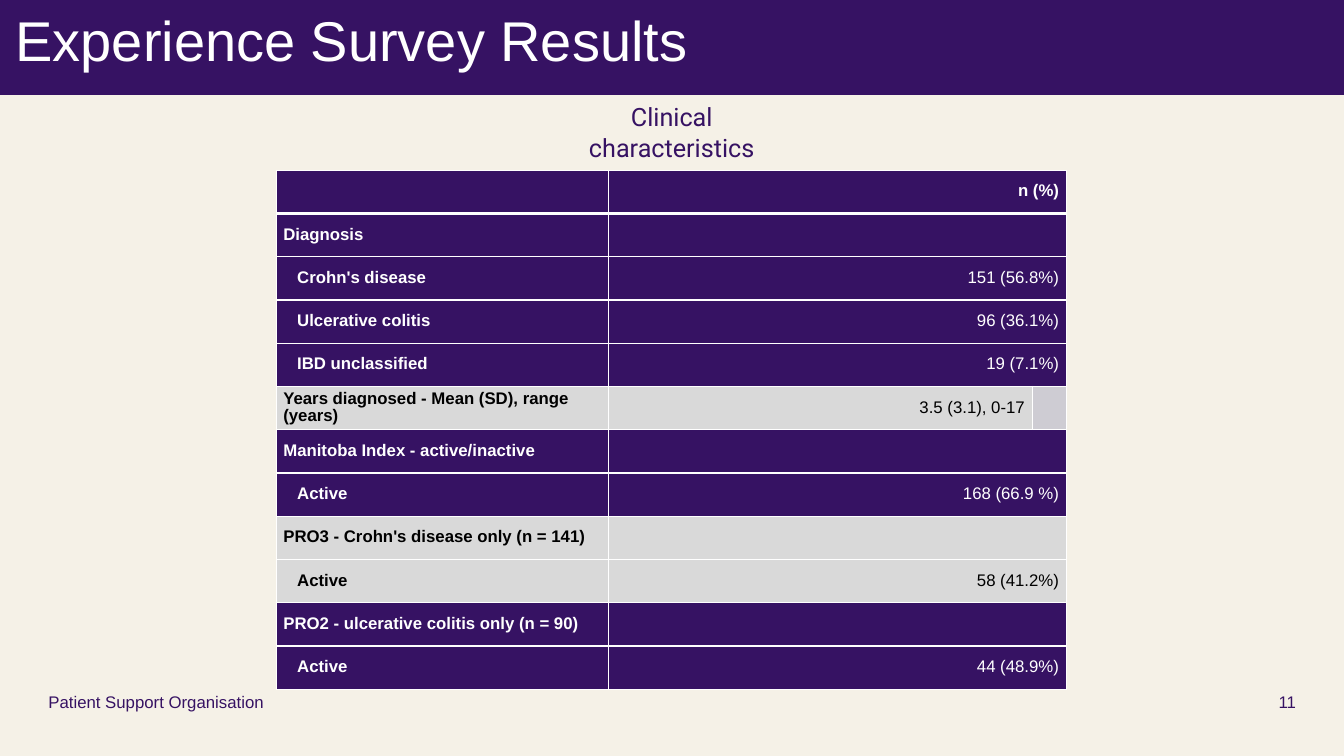
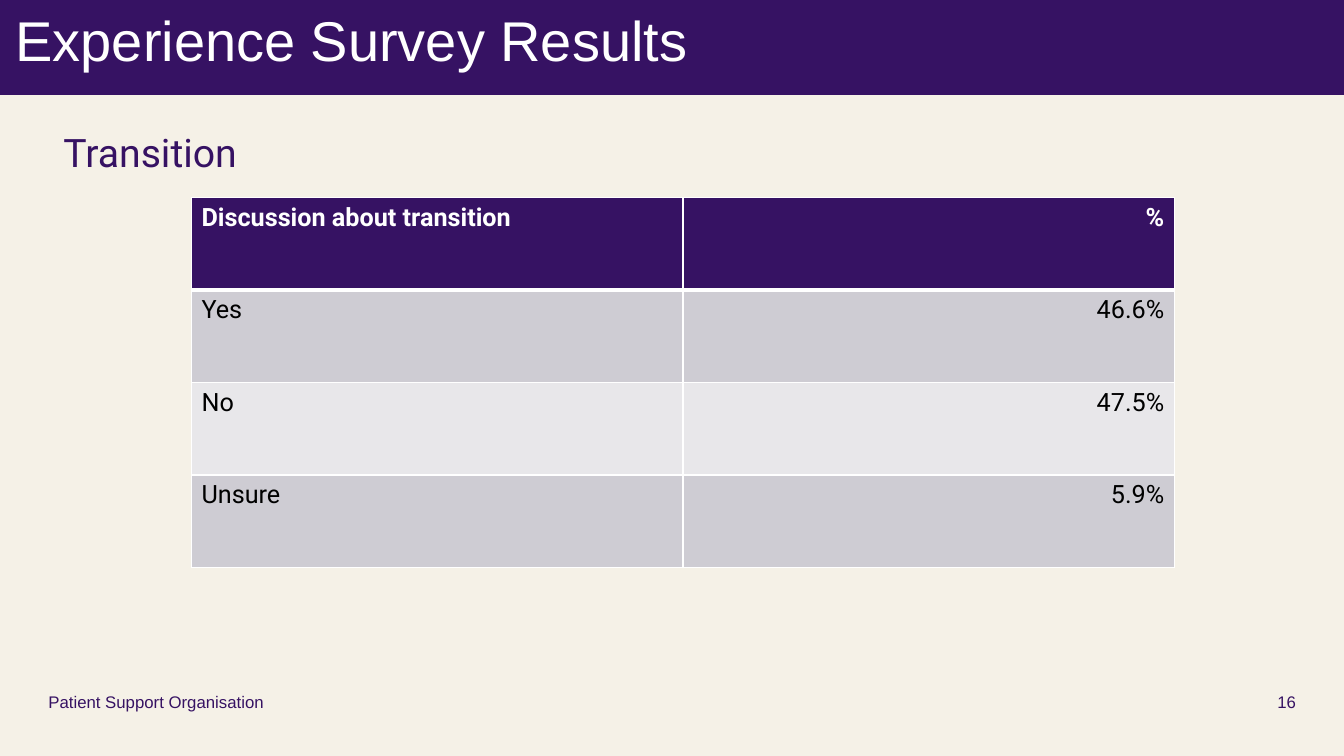
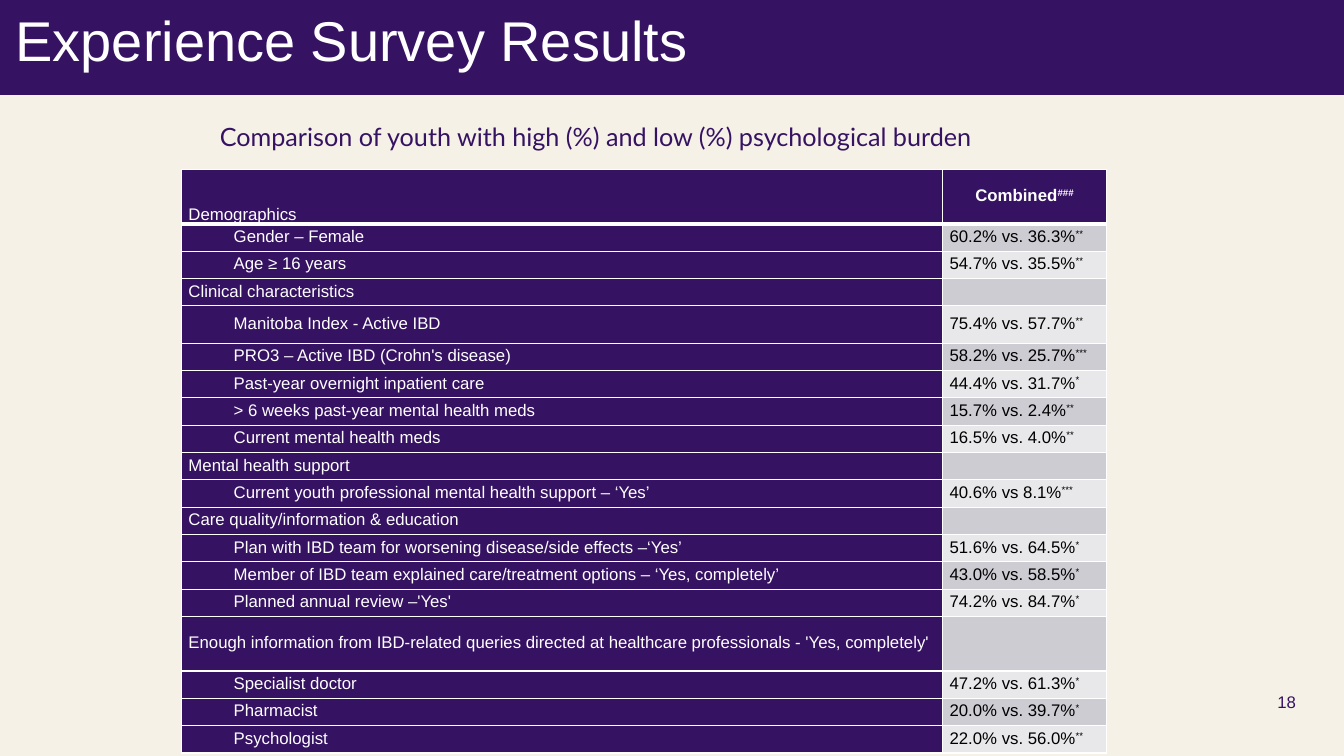
import dataclasses

import lxml.etree
import pptx
import pptx.dml.color
import pptx.enum.text
import pptx.oxml.ns
import pptx.util

Cm = pptx.util.Cm
Pt = pptx.util.Pt
ALIGN = pptx.enum.text.PP_ALIGN
ANCHOR = pptx.enum.text.MSO_ANCHOR
qn = pptx.oxml.ns.qn


@dataclasses.dataclass(frozen=True)
class Theme:
    """Colours, fonts and type sizes shared by all slides."""

    purple: str = "361263"
    cream: str = "F5F1E7"
    white: str = "FFFFFF"
    black: str = "000000"
    grey: str = "D9D9D9"
    band_dark: str = "CECCD3"
    band_light: str = "E8E7EA"
    base_font: str = "Arial"
    accent_font: str = "Roboto"
    caption_font: str = "Lato"
    title_size: int = 40
    heading_size: int = 28
    body_size: int = 18
    small_size: int = 12


THEME = Theme()
TITLE = "Experience Survey Results"
FOOTER = "Patient Support Organisation"
SMALL = {"name": THEME.base_font, "size": Pt(THEME.small_size)}
BODY = {"name": THEME.accent_font, "size": Pt(THEME.body_size)}
TIGHT = {"margin_left": Cm(0.18), "margin_right": Cm(0.18),
         "margin_top": 0, "margin_bottom": 0,
         "vertical_anchor": ANCHOR.MIDDLE}
ROOMY = {"margin_left": Cm(0.25), "margin_right": Cm(0.25),
         "margin_top": Cm(0.13), "margin_bottom": Cm(0.13),
         "vertical_anchor": ANCHOR.TOP}

CLINICAL_ROWS = [
    ("", "n (%)", THEME.purple),
    ("Diagnosis", "", THEME.purple),
    ("> Crohn's disease", "151 (56.8%)", THEME.purple),
    ("> Ulcerative colitis", "96 (36.1%)", THEME.purple),
    ("> IBD unclassified", "19 (7.1%)", THEME.purple),
    ("Years diagnosed - Mean (SD), range (years)", "3.5 (3.1), 0-17",
     THEME.grey),
    ("Manitoba Index - active/inactive", "", THEME.purple),
    ("> Active", "168 (66.9 %)", THEME.purple),
    ("PRO3 - Crohn's disease only (n = 141)", "", THEME.grey),
    ("> Active", "58 (41.2%)", THEME.grey),
    ("PRO2 - ulcerative colitis only (n = 90)", "", THEME.purple),
    ("> Active", "44 (48.9%)", THEME.purple),
]
YEARS_ROW = 5

TRANSITION_ROWS = [
    ("Discussion about transition", "%"),
    ("Yes", "46.6%"),
    ("No", "47.5%"),
    ("Unsure", "5.9%"),
]

BURDEN_ROWS = [
    ("Demographics", "Combined###"),
    ("> Gender – Female", "60.2% vs. 36.3%**"),
    ("> Age ≥ 16 years", "54.7% vs. 35.5%**"),
    ("Clinical characteristics", ""),
    ("> Manitoba Index - Active IBD", "75.4% vs. 57.7%**"),
    ("> PRO3 – Active IBD (Crohn's disease)", "58.2% vs. 25.7%***"),
    ("> Past-year overnight inpatient care", "44.4% vs. 31.7%*"),
    ("> > 6 weeks past-year mental health meds", "15.7% vs. 2.4%**"),
    ("> Current mental health meds", "16.5% vs. 4.0%**"),
    ("Mental health support", ""),
    ("> Current youth professional mental health support – ‘Yes’",
     "40.6% vs 8.1%***"),
    ("Care quality/information & education", ""),
    ("> Plan with IBD team for worsening disease/side effects –‘Yes’",
     "51.6% vs. 64.5%*"),
    ("> Member of IBD team explained care/treatment options – "
     "‘Yes, completely’", "43.0% vs. 58.5%*"),
    ("> Planned annual review –'Yes'", "74.2% vs. 84.7%*"),
    ("Enough information from IBD-related queries directed at healthcare "
     "professionals - 'Yes, completely'", ""),
    ("> Specialist doctor", "47.2% vs. 61.3%*"),
    ("> Pharmacist", "20.0% vs. 39.7%*"),
    ("> Psychologist", "22.0% vs. 56.0%**"),
]
BURDEN_HEIGHTS = {0: 1.37, 4: 0.94, 15: 1.37}


def apply_format(target, values):
    """Set each named attribute of the target."""
    for name, value in values.items():
        setattr(target, name, value)


def rgb(colour):
    """Turn a hex string into a colour value."""
    return pptx.dml.color.RGBColor.from_string(colour)


def paint(target, colour):
    """Give a shape, cell or background a solid fill."""
    target.fill.solid()
    target.fill.fore_color.rgb = rgb(colour)


def add_span(para, text, font, colour):
    """Add one formatted run to a paragraph."""
    span = para.add_run()
    span.text = text
    apply_format(span.font, font)
    span.font.color.rgb = rgb(colour)
    return span


def add_label(page, text, place, font, frame_format=None, align=ALIGN.LEFT):
    """Add a purple text box without insets."""
    box = page.shapes.add_textbox(*map(Cm, place))
    frame = box.text_frame
    apply_format(frame, {"margin_left": 0, "margin_right": 0,
                         "margin_top": 0, "margin_bottom": 0,
                         "word_wrap": True, **(frame_format or {})})
    para = frame.paragraphs[0]
    para.alignment = align
    add_span(para, text, font, THEME.purple)


def add_page(deck, number, footer=FOOTER):
    """Add a slide with its title band, footer and number."""
    page = deck.slides.add_slide(deck.slide_layouts[5])
    title = page.shapes.title
    apply_format(title, {"left": 0, "top": 0, "width": deck.slide_width,
                         "height": Cm(2.39)})
    paint(title, THEME.purple)
    frame = title.text_frame
    apply_format(frame, {"margin_left": Cm(0.39), "margin_right": 0,
                         "margin_top": Cm(0.14), "margin_bottom": 0,
                         "vertical_anchor": ANCHOR.TOP, "word_wrap": True,
                         "auto_size": pptx.enum.text.MSO_AUTO_SIZE.NONE})
    para = frame.paragraphs[0]
    para.alignment = ALIGN.LEFT
    add_span(para, TITLE,
             {"name": THEME.base_font, "size": Pt(THEME.title_size)},
             THEME.white)
    bottom = {"vertical_anchor": ANCHOR.BOTTOM}
    if footer:
        add_label(page, footer, (1.22, 17.02, 12.09, 0.91), SMALL, bottom)
    add_label(page, str(number), (31.52, 17.02, 1.14, 0.91), SMALL, bottom,
              ALIGN.RIGHT)
    return page


def set_borders(cell, row):
    """Draw white cell borders, thicker under the header row."""
    widths = {"L": 1, "R": 1, "T": 3 if row == 1 else 1,
              "B": 3 if row == 0 else 1}
    properties = cell._tc.get_or_add_tcPr()
    for index, (side, width) in enumerate(widths.items()):
        line = lxml.etree.Element(qn("a:ln" + side), w=str(Pt(width)))
        fill = lxml.etree.SubElement(line, qn("a:solidFill"))
        lxml.etree.SubElement(fill, qn("a:srgbClr"), val=THEME.white)
        properties.insert(index, line)


def add_table(page, corner, widths, heights):
    """Add a table with the given column widths and row heights."""
    frame = page.shapes.add_table(
        len(heights), len(widths), *map(Cm, corner),
        Cm(sum(widths)), Cm(sum(heights)))
    table = frame.table
    for column, width in zip(table.columns, widths):
        column.width = Cm(width)
    for row, height in zip(table.rows, heights):
        row.height = Cm(height)
    for row, cells in enumerate(table.rows):
        for cell in cells.cells:
            set_borders(cell, row)
    return table


def write_cell(cell, text, fill, font, cell_format, align=ALIGN.LEFT,
               indent=0, spacing=None):
    """Fill a cell; '> ' indents and trailing marks are raised."""
    paint(cell, fill)
    apply_format(cell, cell_format)
    para = cell.text_frame.paragraphs[0]
    apply_format(para, {"alignment": align, "line_spacing": spacing})
    colour = THEME.white if fill == THEME.purple else THEME.black
    if text.startswith("> "):
        text = text[2:]
        para._p.get_or_add_pPr().set("marL", str(Cm(indent)))
    words = text.rstrip("*#")
    if words:
        add_span(para, words, font, colour)
    if words != text:
        mark = add_span(para, text[len(words):], font, colour)
        mark._r.get_or_add_rPr().set("baseline", "30000")
    lxml.etree.SubElement(para._p, qn("a:endParaRPr"),
                          sz=str(int(font["size"].pt * 100)))


def band(row):
    """Return the alternating fill of a body row."""
    return THEME.band_dark if row % 2 else THEME.band_light


def add_clinical_page(deck):
    """Build the clinical characteristics slide."""
    page = add_page(deck, 11)
    add_label(page, "Clinical characteristics", (13.97, 2.79, 5.92, 1.07),
              BODY, {"vertical_anchor": ANCHOR.MIDDLE, "word_wrap": False},
              ALIGN.CENTER)
    table = add_table(page, (6.96, 4.29), (8.38, 10.67, 0.86),
                      [1.09] * len(CLINICAL_ROWS))
    bold = {**SMALL, "bold": True}
    spacing = Pt(THEME.small_size)
    for row, (name, value, fill) in enumerate(CLINICAL_ROWS):
        if row == YEARS_ROW:
            write_cell(table.cell(row, 2), "", THEME.band_dark, SMALL, TIGHT)
        else:
            table.cell(row, 1).merge(table.cell(row, 2))
        write_cell(table.cell(row, 0), name, fill, bold, TIGHT,
                   indent=0.35, spacing=spacing)
        write_cell(table.cell(row, 1), value, fill,
                   SMALL if row else bold, TIGHT, ALIGN.RIGHT,
                   spacing=spacing)


def add_transition_page(deck):
    """Build the transition slide."""
    page = add_page(deck, 16)
    add_label(page, "Transition", (1.6, 3.23, 10.36, 0.91),
              {"name": THEME.accent_font, "size": Pt(THEME.heading_size)})
    table = add_table(page, (4.83, 4.98), (12.38, 12.38),
                      [2.33] * len(TRANSITION_ROWS))
    for row, texts in enumerate(TRANSITION_ROWS):
        font = {**BODY, "bold": row == 0}
        fill = band(row) if row else THEME.purple
        for column, align in enumerate((ALIGN.LEFT, ALIGN.RIGHT)):
            write_cell(table.cell(row, column), texts[column], fill, font,
                       ROOMY, align)


def add_burden_page(deck):
    """Build the psychological burden slide."""
    page = add_page(deck, 18, footer=None)
    add_label(page, "Comparison of youth with high (%) and low (%) "
              "psychological burden", (5.54, 3.07, 22.76, 0.9),
              {"name": THEME.caption_font, "size": Pt(THEME.body_size)})
    heights = [BURDEN_HEIGHTS.get(row, 0.69)
               for row in range(len(BURDEN_ROWS))]
    table = add_table(page, (4.57, 4.27), (19.18, 4.14), heights)
    spacing = Pt(THEME.small_size)
    for row, (name, value) in enumerate(BURDEN_ROWS):
        anchor = ANCHOR.MIDDLE if row else ANCHOR.BOTTOM
        write_cell(table.cell(row, 0), name, THEME.purple, SMALL,
                   {**TIGHT, "vertical_anchor": anchor}, indent=1.14,
                   spacing=spacing)
        write_cell(table.cell(row, 1), value,
                   band(row) if row else THEME.purple,
                   {**SMALL, "bold": row == 0}, TIGHT,
                   ALIGN.LEFT if row else ALIGN.CENTER, spacing=spacing)


def main():
    """Build and save the deck."""
    deck = pptx.Presentation()
    apply_format(deck, {"slide_width": Cm(33.87), "slide_height": Cm(19.05)})
    paint(deck.slide_master.background, THEME.cream)
    add_clinical_page(deck)
    add_transition_page(deck)
    add_burden_page(deck)
    deck.save("out.pptx")


if __name__ == "__main__":
    main()
